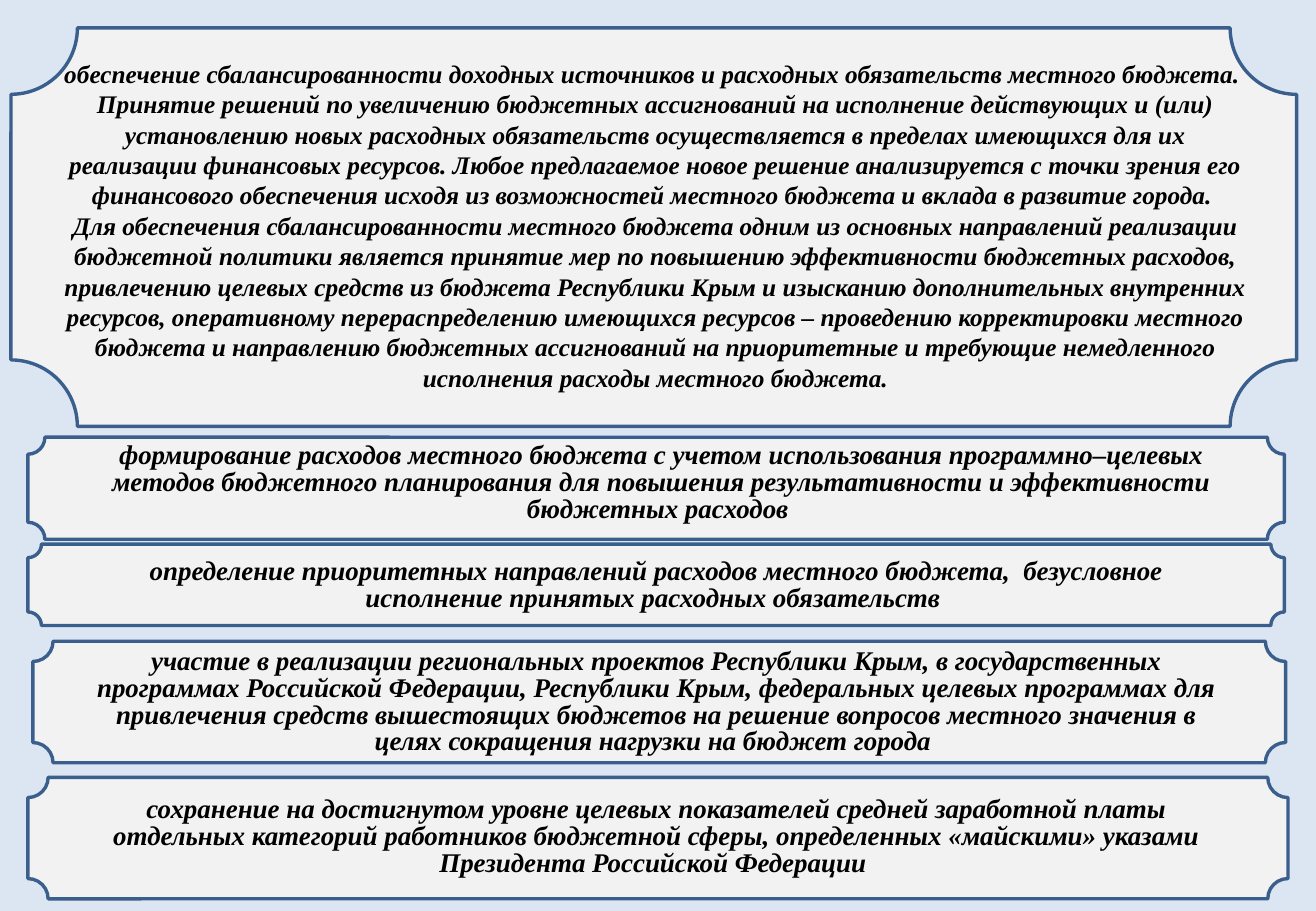
from dataclasses import dataclass

from pptx import Presentation
from pptx.dml.color import RGBColor
from pptx.enum.shapes import MSO_SHAPE as Preset
from pptx.enum.text import MSO_AUTO_SIZE as AutoSize, PP_ALIGN as Align
from pptx.util import Inches, Pt


@dataclass(frozen=True)
class Theme:
    background: RGBColor = RGBColor(0xDC, 0xE6, 0xF2)
    panel: RGBColor = RGBColor(0xF2, 0xF2, 0xF2)
    border: RGBColor = RGBColor(0x3A, 0x5F, 0x8C)
    ink: RGBColor = RGBColor(0, 0, 0)
    font: str = "Times New Roman"
    balance_size: float = 15
    goal_size: float = 16
    goal_spacing: float = 16
    border_width: float = 2


theme = Theme()

deck = Presentation()
deck.slide_width, deck.slide_height = Inches(10.83), Inches(7.5)
slide = deck.slides.add_slide(deck.slide_layouts[6])
slide.background.fill.solid()
slide.background.fill.fore_color.rgb = theme.background


def add_text(paragraphs, *, area, size, spacing=None):
    box = slide.shapes.add_textbox(*map(Inches, area))
    frame = box.text_frame
    frame.word_wrap = True
    frame.auto_size = AutoSize.SHAPE_TO_FIT_TEXT
    for index, text in enumerate(paragraphs):
        paragraph = frame.paragraphs[0] if index == 0 else frame.add_paragraph()
        paragraph.alignment = Align.CENTER
        if spacing:
            paragraph.line_spacing = Pt(spacing)
        run = paragraph.add_run()
        run.text = text
        run.font.name = theme.font
        run.font.size = Pt(size)
        run.font.bold = run.font.italic = True
        run.font.color.rgb = theme.ink


def add_plaque(area):
    plaque = slide.shapes.add_shape(Preset.PLAQUE, *map(Inches, area))
    plaque.shadow.inherit = False
    plaque.fill.solid()
    plaque.fill.fore_color.rgb = theme.panel
    plaque.line.color.rgb = theme.border
    plaque.line.width = Pt(theme.border_width)


# Balanced budget: the large plaque at the top
balance = [
    "обеспечение сбалансированности доходных источников и расходных обязательств "
    "местного бюджета. ",
    "Принятие решений по увеличению бюджетных ассигнований на исполнение действующих "
    "и (или) установлению новых расходных обязательств осуществляется в пределах "
    "имеющихся для их реализации финансовых ресурсов. Любое предлагаемое новое решение "
    "анализируется с точки зрения его финансового обеспечения исходя из возможностей "
    "местного бюджета и вклада в развитие города. ",
    "Для обеспечения сбалансированности местного бюджета одним из основных направлений "
    "реализации бюджетной политики является принятие мер по повышению эффективности "
    "бюджетных расходов, привлечению целевых средств из бюджета Республики Крым и "
    "изысканию дополнительных внутренних ресурсов, оперативному перераспределению "
    "имеющихся ресурсов – проведению корректировки местного бюджета и направлению "
    "бюджетных ассигнований на приоритетные и требующие немедленного исполнения "
    "расходы местного бюджета.",
]
add_plaque((0.09, 0.23, 10.58, 3.28))
add_text(balance, area=(0.41, 0.43, 9.97, 3.58), size=theme.balance_size)

# Further goals: plaque area, text area, wording
goals = [
    ((0.23, 3.6, 10.34, 0.84), (0.7, 3.6, 9.48, 0.77),
     "формирование расходов местного бюджета с учетом использования "
     "программно–целевых методов бюджетного планирования для повышения "
     "результативности и эффективности бюджетных расходов "),
    ((0.23, 4.48, 10.34, 0.67), (0.66, 4.55, 9.48, 0.55),
     "определение приоритетных направлений расходов местного бюджета,  безусловное "
     "исполнение принятых расходных обязательств "),
    ((0.27, 5.28, 10.31, 1), (0.66, 5.29, 9.48, 1),
     "участие в реализации региональных проектов Республики Крым, в государственных "
     "программах Российской Федерации, Республики Крым, федеральных целевых программах "
     "для привлечения средств вышестоящих бюджетов на решение вопросов местного "
     "значения в целях сокращения нагрузки на бюджет города "),
    ((0.23, 6.4, 10.37, 1), (0.66, 6.51, 9.48, 0.77),
     "сохранение на достигнутом уровне целевых показателей средней заработной платы "
     "отдельных категорий работников бюджетной сферы, определенных «майскими» указами "
     "Президента Российской Федерации "),
]
for plaque_area, text_area, goal in goals:
    add_plaque(plaque_area)
    add_text([goal], area=text_area, size=theme.goal_size, spacing=theme.goal_spacing)

deck.save("out.pptx")
